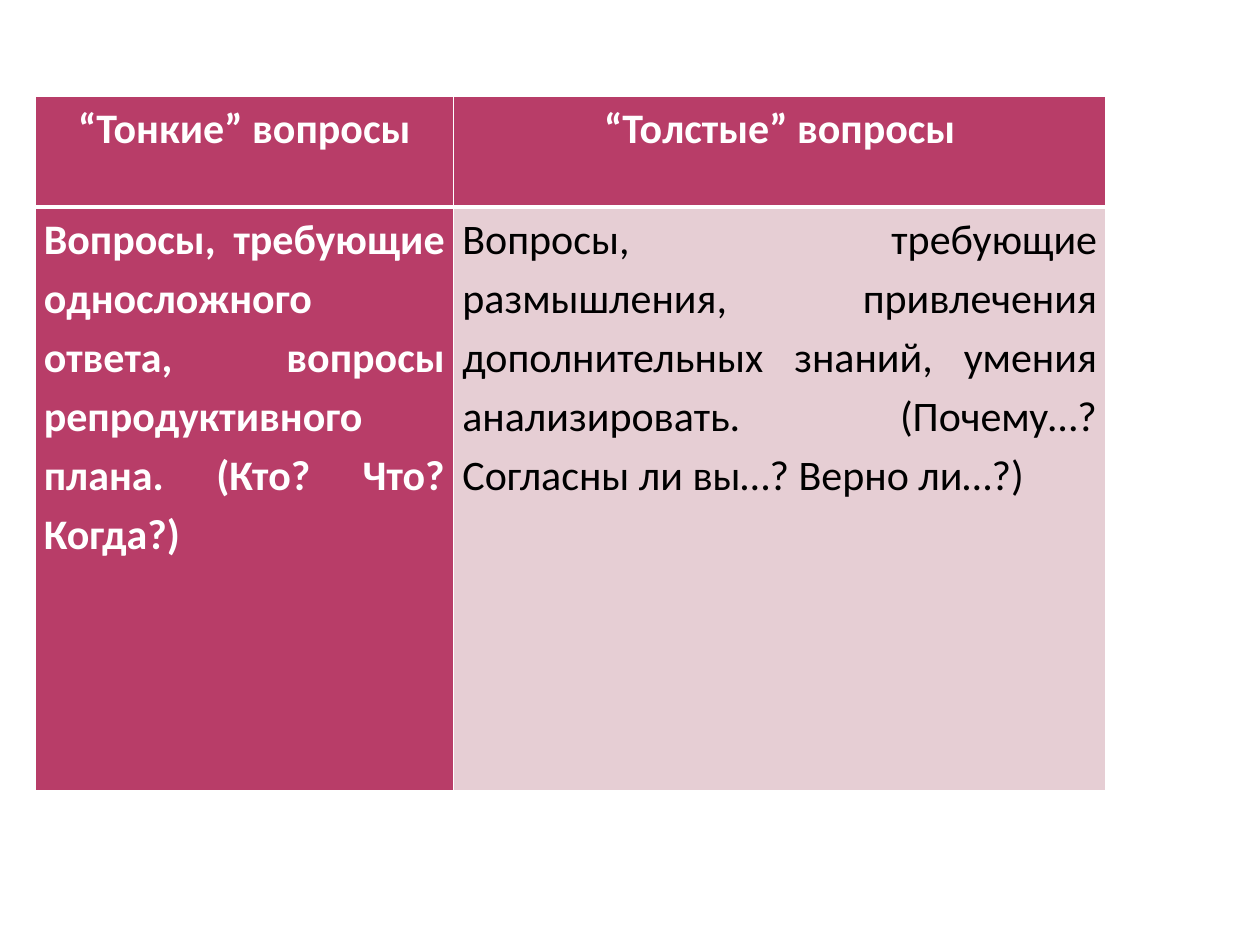
from lxml.etree import SubElement
from pptx import Presentation
from pptx.dml.color import RGBColor
from pptx.enum.text import PP_ALIGN
from pptx.oxml.ns import qn
from pptx.util import Pt

WHITE = RGBColor(0xFF, 0xFF, 0xFF)
BLACK = RGBColor(0x00, 0x00, 0x00)
RASPBERRY = RGBColor(0xB8, 0x3D, 0x68)
PALE_PINK = RGBColor(0xE6, 0xCE, 0xD4)


class SlideBuilder:
    font_name = "Calibri"
    font_size = Pt(24)
    line_spacing = 1.15
    side_margin = Pt(5.04)

    def __init__(self, slide):
        self.slide = slide

    def table(self, left, top, column_widths, row_heights):
        table = self.slide.shapes.add_table(
            len(row_heights), len(column_widths), Pt(left), Pt(top),
            Pt(sum(column_widths)), Pt(sum(row_heights))).table
        table.horz_banding = False
        table.first_col = True
        for column, width in zip(table.columns, column_widths):
            column.width = Pt(width)
        for row, height in zip(table.rows, row_heights):
            row.height = Pt(height)
        return table

    def cell(self, cell, text, align, fill, color, bold, top=1, bottom=1):
        cell.margin_left = cell.margin_right = self.side_margin
        cell.margin_top = cell.margin_bottom = 0
        # Borders come before the fill in the cell properties
        self.borders(cell, {"lnL": 1, "lnR": 1, "lnT": top, "lnB": bottom})
        cell.fill.solid()
        cell.fill.fore_color.rgb = fill
        cell.text = text
        paragraph = cell.text_frame.paragraphs[0]
        paragraph.alignment = align
        paragraph.line_spacing = self.line_spacing
        font = paragraph.font
        font.name = self.font_name
        font.size = self.font_size
        font.bold = bold
        font.color.rgb = color

    def borders(self, cell, widths):
        properties = cell._tc.get_or_add_tcPr()
        for side, width in widths.items():
            line = SubElement(properties, qn(f"a:{side}"), w=str(Pt(width)))
            solid = SubElement(line, qn("a:solidFill"))
            SubElement(solid, qn("a:srgbClr"), val=str(WHITE))


def main():
    presentation = Presentation()
    presentation.slide_width = Pt(720)
    presentation.slide_height = Pt(540)
    blank_layout = presentation.slide_layouts[6]
    builder = SlideBuilder(presentation.slides.add_slide(blank_layout))

    questions = builder.table(20, 55, (239.2, 372.8), (63.4, 333.4))

    # Header row
    for column, heading in enumerate(("“Тонкие” вопросы", "“Толстые” вопросы")):
        builder.cell(questions.cell(0, column), heading, PP_ALIGN.CENTER,
                     RASPBERRY, WHITE, True, bottom=3)

    # Descriptions of the two kinds of question
    descriptions = (
        ("Вопросы, требующие односложного ответа, вопросы репродуктивного "
         "плана. (Кто? Что? Когда?)", RASPBERRY, WHITE, True),
        ("Вопросы, требующие размышления, привлечения дополнительных знаний, "
         "умения анализировать. (Почему…? Согласны ли вы…? Верно ли…?)",
         PALE_PINK, BLACK, False),
    )
    for column, (description, fill, color, bold) in enumerate(descriptions):
        builder.cell(questions.cell(1, column), description, PP_ALIGN.JUSTIFY,
                     fill, color, bold, top=3)

    presentation.save("out.pptx")


if __name__ == "__main__":
    main()
